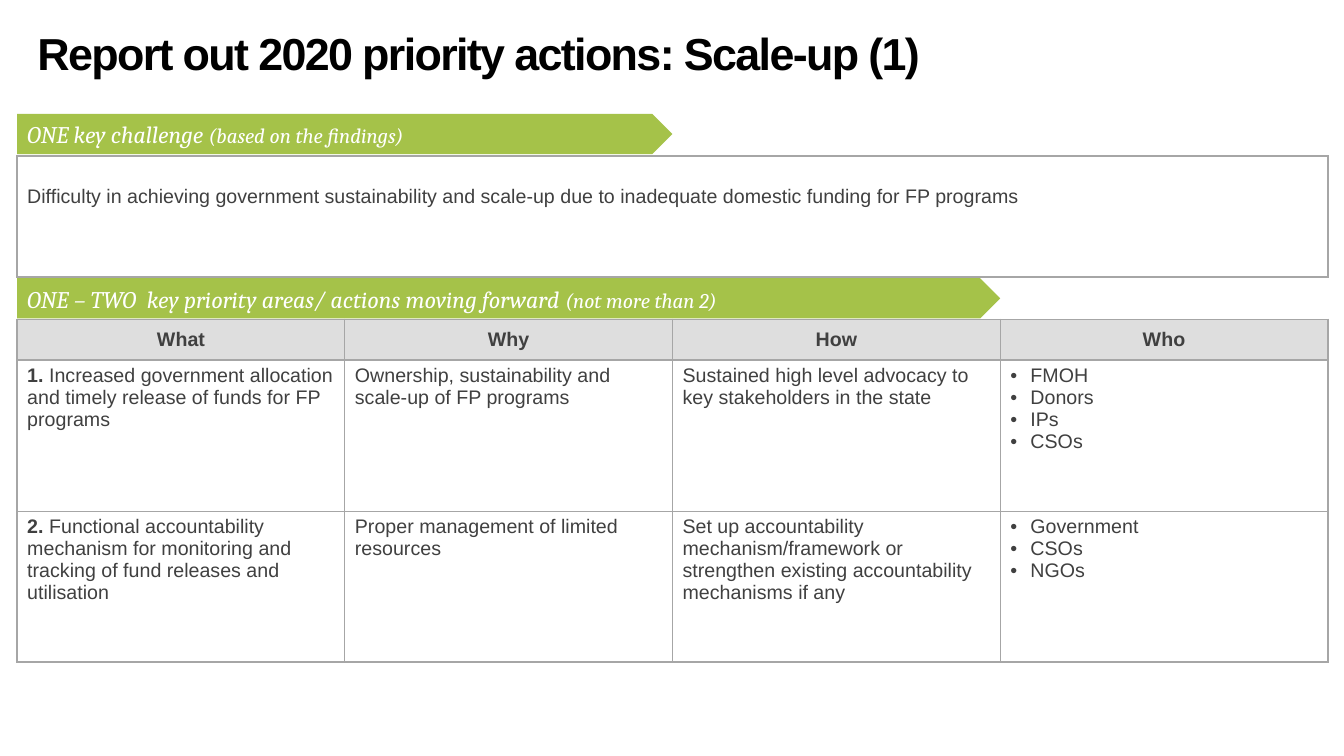
import pptx
import pptx.util
import pptx.dml.color
import pptx.enum.shapes
import pptx.enum.text
import pptx.oxml.ns
import lxml.etree

Inches, Pt = pptx.util.Inches, pptx.util.Pt
ALIGN, ANCHOR = pptx.enum.text.PP_ALIGN, pptx.enum.text.MSO_ANCHOR
qn = pptx.oxml.ns.qn

COLORS = {"title": "000000", "text": "404040", "banner": "A5C249",
          "banner_text": "FFFFFF", "header": "DEDEDE", "cell": "FFFFFF",
          "border": "A6A6A6"}
LEFT, WIDTH = 0.17, 13
THIN, THICK = 0.75, 1.5

HEADERS = ["What", "Why", "How", "Who"]
# Each action: number, what, why, how, who
ACTIONS = [
    ("1. ", "Increased government allocation and timely release of funds for FP programs",
     "Ownership, sustainability and scale-up of FP programs",
     "Sustained high level advocacy to key stakeholders in the state",
     ["FMOH", "Donors", "IPs", "CSOs"]),
    ("2. ", "Functional accountability mechanism for monitoring and tracking of "
     "fund releases and utilisation",
     "Proper management of limited resources",
     "Set up accountability mechanism/framework or strengthen existing "
     "accountability mechanisms if any",
     ["Government", "CSOs", "NGOs"]),
]


def rgb(name):
    return pptx.dml.color.RGBColor.from_string(COLORS[name])


def add_run(p, text, size=14, color="text", font="Arial", bold=False, italic=False):
    r = p.add_run()
    r.text = text
    r.font.size, r.font.name = Pt(size), font
    r.font.bold, r.font.italic = bold, italic
    r.font.color.rgb = rgb(color)
    return r


def add_title(slide, x, y, w, h, text):
    sp = slide.shapes.title
    sp.left, sp.top, sp.width, sp.height = map(Inches, (x, y, w, h))
    tf = sp.text_frame
    tf.word_wrap = True
    tf.auto_size = pptx.enum.text.MSO_AUTO_SIZE.NONE
    tf.vertical_anchor = ANCHOR.MIDDLE
    p = tf.paragraphs[0]
    p.alignment, p.line_spacing = ALIGN.LEFT, 0.9
    r = add_run(p, text, 32, "title", bold=True)
    r.font._element.set("spc", "-120")


def add_banner(slide, x, y, w, h, runs):
    sp = slide.shapes.add_shape(pptx.enum.shapes.MSO_SHAPE.PENTAGON,
                                *map(Inches, (x, y, w, h)))
    sp.shadow.inherit = False
    sp.fill.solid()
    sp.fill.fore_color.rgb = rgb("banner")
    sp.line.fill.background()
    tf = sp.text_frame
    tf.word_wrap = True
    tf.vertical_anchor = ANCHOR.MIDDLE
    p = tf.paragraphs[0]
    p.alignment = ALIGN.LEFT
    for text, size in runs:
        add_run(p, text, size, "banner_text", "Cambria", italic=True)


def style_cell(cell, fill, widths):
    """Set the left, right, top and bottom border widths, then the fill."""
    tcPr = cell._tc.get_or_add_tcPr()
    for side, width in zip("LRTB", widths):
        ln = lxml.etree.SubElement(tcPr, qn("a:ln" + side), w=str(Pt(width)))
        solid = lxml.etree.SubElement(ln, qn("a:solidFill"))
        lxml.etree.SubElement(solid, qn("a:srgbClr"), val=COLORS["border"])
    cell.fill.solid()
    cell.fill.fore_color.rgb = rgb(fill)


def add_grid(slide, x, y, w, row_heights, n_cols):
    frame = slide.shapes.add_table(len(row_heights), n_cols,
                                   *map(Inches, (x, y, w, sum(row_heights))))
    table = frame.table
    table.first_row = table.horz_banding = False
    for col in table.columns:
        col.width = Inches(w / n_cols)
    for row, height in zip(table.rows, row_heights):
        row.height = Inches(height)
    return table


def add_bullets(tf, items):
    for i, item in enumerate(items):
        p = tf.add_paragraph() if i else tf.paragraphs[0]
        pPr = p._p.get_or_add_pPr()
        pPr.set("marL", str(Inches(0.2)))
        pPr.set("indent", str(Inches(-0.2)))
        lxml.etree.SubElement(pPr, qn("a:buFont"), typeface="Arial")
        lxml.etree.SubElement(pPr, qn("a:buChar"), char="•")
        add_run(p, item)


def add_challenge(slide, x, y, w, h, text):
    cell = add_grid(slide, x, y, w, [h], 1).cell(0, 0)
    style_cell(cell, "cell", [THICK] * 4)
    cell.margin_top = Inches(0.29)
    add_run(cell.text_frame.paragraphs[0], text)


def add_actions(slide, x, y, w, header_h, row_h):
    n_cols, last = len(HEADERS), len(ACTIONS)
    table = add_grid(slide, x, y, w, [header_h] + [row_h] * last, n_cols)
    # Thick outer frame and header, thin inner lines
    for i in range(last + 1):
        for j in range(n_cols):
            style_cell(table.cell(i, j), "cell" if i else "header",
                       [THICK if j == 0 else THIN,
                        THICK if j == n_cols - 1 else THIN,
                        THICK if i <= 1 else THIN,
                        THICK if i in (0, last) else THIN])
    # Header row
    for j, header in enumerate(HEADERS):
        cell = table.cell(0, j)
        cell.vertical_anchor = ANCHOR.MIDDLE
        p = cell.text_frame.paragraphs[0]
        p.alignment = ALIGN.CENTER
        add_run(p, header, bold=True)
    # Action rows
    for i, (number, what, why, how, who) in enumerate(ACTIONS, 1):
        add_run(table.cell(i, 0).text_frame.paragraphs[0], number, bold=True)
        for j, text in enumerate((what, why, how)):
            add_run(table.cell(i, j).text_frame.paragraphs[0], text)
        add_bullets(table.cell(i, 3).text_frame, who)


def main():
    prs = pptx.Presentation()
    prs.slide_width, prs.slide_height = Inches(13.33), Inches(7.5)
    slide = prs.slides.add_slide(prs.slide_layouts[5])
    add_title(slide, 0.27, 0.23, 12.8, 0.65,
              "Report out 2020 priority actions: Scale-up (1)")
    # Priority actions
    add_actions(slide, LEFT, 3.17, WIDTH, 0.4, 1.5)
    # Section banners
    add_banner(slide, LEFT, 1.13, WIDTH / 2, 0.4,
               [("ONE key challenge ", 17), ("(based on the findings)", 15)])
    add_banner(slide, LEFT, 2.76, WIDTH * 3 / 4, 0.4,
               [("ONE – TWO  key priority areas/ actions moving forward", 17),
                (" ", 18), ("(not more than 2)", 15)])
    # Key challenge
    add_challenge(slide, LEFT, 1.55, WIDTH, 1.2,
                  "Difficulty in achieving government sustainability and scale-up "
                  "due to inadequate domestic funding for FP programs")
    prs.save("out.pptx")


if __name__ == "__main__":
    main()
